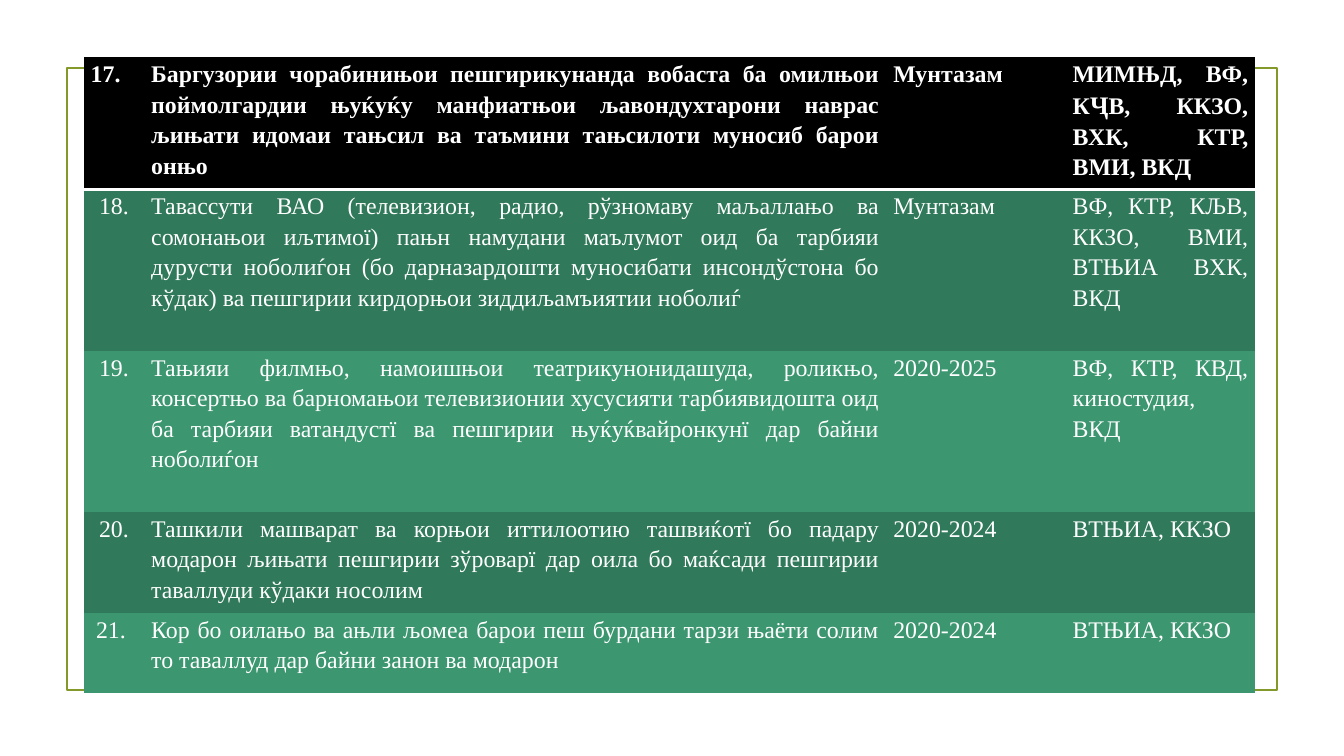
from lxml import etree
from pptx import Presentation, util as u
from pptx.dml.color import RGBColor
from pptx.enum import shapes, text
from pptx.oxml import ns

WIDTH, HEIGHT = u.Inches(13.33), u.Inches(7.5)
FONT = "Times New Roman"
WHITE = RGBColor(0xFF, 0xFF, 0xFF)
BLACK = RGBColor(0x00, 0x00, 0x00)
OLIVE = RGBColor(0x83, 0x99, 0x2A)
DARK_GREEN = RGBColor(0x30, 0x79, 0x5A)
GREEN = RGBColor(0x3C, 0x97, 0x70)
NO_STYLE = "{2D5ABB26-0587-4C30-8999-92F81FD0307C}"
COLUMNS = (0.6, 7.36, 1.78, 1.88)
ROWS = (1.31, 1.6, 1.6, 1, 0.8)
LARGE_LETTER = "Ҷ"

MEASURES = (
    ("17.",
     "Баргузории чорабинињои пешгирикунанда вобаста ба омилњои поймолгардии "
     "њуќуќу манфиатњои љавондухтарони наврас љињати идомаи тањсил ва таъмини "
     "тањсилоти муносиб барои онњо",
     "Мунтазам ", "МИМЊД, ВФ, КҶВ, ККЗО, ВХК, КТР, ВМИ, ВКД"),
    ("18.",
     "Тавассути ВАО (телевизион, радио, рўзномаву маљаллањо ва сомонањои "
     "иљтимої) пањн намудани маълумот оид ба тарбияи дурусти ноболиѓон (бо "
     "дарназардошти муносибати инсондўстона бо кўдак) ва пешгирии кирдорњои "
     "зиддиљамъиятии ноболиѓ",
     "Мунтазам ", "ВФ, КТР, КЉВ, ККЗО, ВМИ, ВТЊИА ВХК, ВКД"),
    ("19.",
     "Тањияи филмњо, намоишњои театрикунонидашуда, роликњо, консертњо ва "
     "барномањои телевизионии хусусияти тарбиявидошта оид ба тарбияи "
     "ватандустї ва пешгирии њуќуќвайронкунї дар байни ноболиѓон",
     "2020-2025", "ВФ, КТР, КВД, киностудия, ВКД"),
    ("20.",
     "Ташкили машварат ва корњои иттилоотию ташвиќотї бо падару модарон "
     "љињати пешгирии зўроварї дар оила бо маќсади пешгирии таваллуди кўдаки "
     "носолим",
     "2020-2024", "ВТЊИА, ККЗО"),
    ("21. ",
     "Кор бо оилањо ва ањли љомеа барои пеш бурдани тарзи њаёти солим то "
     "таваллуд дар байни занон ва модарон",
     "2020-2024", "ВТЊИА, ККЗО "),
)


def add_frame(s):
    """Draw the thin olive frame behind the table."""
    sp = s.shapes.add_shape(shapes.MSO_SHAPE.RECTANGLE, int(WIDTH * 0.05),
                            int(HEIGHT * 0.09), int(WIDTH * 0.9), u.Inches(6.17))
    sp.shadow.inherit = False
    sp.fill.background()
    sp.line.color.rgb = OLIVE
    sp.line.width = u.Pt(1.25)


def underline_cell(cell):
    """Give a cell a white bottom border."""
    ln = etree.SubElement(cell._tc.get_or_add_tcPr(), ns.qn("a:lnB"),
                          w=str(u.Pt(2)))
    fill = etree.SubElement(ln, ns.qn("a:solidFill"))
    etree.SubElement(fill, ns.qn("a:srgbClr"), val=str(WHITE))


def write_cell(cell, words, align, header, after):
    """Write one paragraph, enlarging the substituted letter."""
    cell.margin_left = cell.margin_right = u.Inches(0.07)
    cell.margin_top = cell.margin_bottom = 0
    p = cell.text_frame.paragraphs[0]
    p.alignment = align
    p.line_spacing = 1.15
    p.space_after = u.Pt(after)
    for part in words.partition(LARGE_LETTER):
        if part:
            r = p.add_run()
            r.text = part
            r.font.name = FONT
            r.font.size = u.Pt(18 if part == LARGE_LETTER else 17)
            r.font.bold = header
            r.font.color.rgb = WHITE


def add_measures(s):
    """Add the table of measures with a black first row and green bands."""
    frame = s.shapes.add_table(len(ROWS), len(COLUMNS), u.Inches(0.83),
                               u.Inches(0.57), u.Inches(sum(COLUMNS)),
                               u.Inches(sum(ROWS)))
    table = frame.table
    table.horz_banding = False
    table._tbl.tblPr.find(ns.qn("a:tableStyleId")).text = NO_STYLE
    for column, width in zip(table.columns, COLUMNS):
        column.width = u.Inches(width)
    for i, (row, height, measure) in enumerate(zip(table.rows, ROWS, MEASURES)):
        row.height = u.Inches(height)
        header = i == 0
        color = BLACK if header else (GREEN, DARK_GREEN)[i % 2]
        for j, (cell, words) in enumerate(zip(row.cells, measure)):
            align = text.PP_ALIGN.JUSTIFY
            if j == 0:
                align = text.PP_ALIGN.LEFT if header else text.PP_ALIGN.CENTER
            write_cell(cell, words, align, header, 10 if j else 0)
            if header:
                underline_cell(cell)
            cell.fill.solid()
            cell.fill.fore_color.rgb = color


def main():
    """Build and save the slide."""
    prs = Presentation()
    prs.slide_width, prs.slide_height = WIDTH, HEIGHT
    s = prs.slides.add_slide(prs.slide_layouts[6])
    add_frame(s)
    add_measures(s)
    prs.save("out.pptx")


if __name__ == "__main__":
    main()
